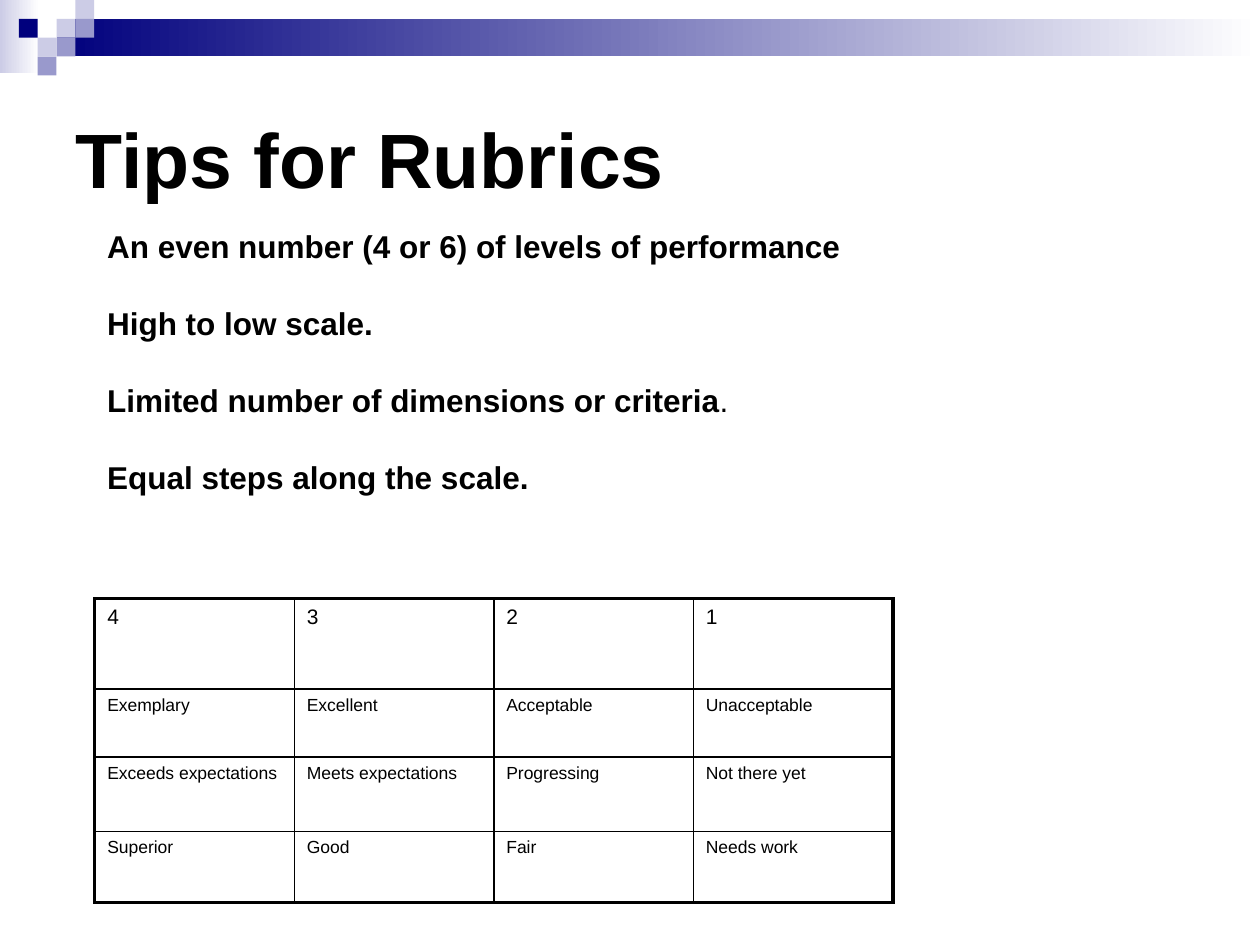
from lxml.etree import SubElement
from pptx import Presentation
from pptx.dml.color import RGBColor
from pptx.enum.shapes import MSO_SHAPE
from pptx.enum.text import MSO_ANCHOR
from pptx.oxml import parse_xml
from pptx.oxml.ns import nsdecls, qn
from pptx.util import Cm, Pt

COLOURS = {
    "ink": "000000",
    "paper": "FFFFFF",
    "navy": "00007D",
    "mid": "9999CC",
    "pale": "CCCCE6",
}
FONT = "Arial"
SQUARE = 0.38
SQUARES = [  # column, row, colour
    (3, 1, "pale"), (4, 0, "pale"), (4, 1, "mid"), (2, 2, "pale"),
    (1, 1, "navy"), (3, 2, "mid"), (2, 3, "mid"),
]
TIPS = [
    [("An even number (4 or 6) of levels of performance", True)],
    [("High to low scale.", True)],
    [("Limited number of dimensions or criteria", True), (".", False)],
    [("Equal steps along the scale.", True)],
]
RUBRIC = [
    ["4", "3", "2", "1"],
    ["Exemplary", "Excellent", "Acceptable", "Unacceptable"],
    ["Exceeds expectations", "Meets expectations", "Progressing", "Not there yet"],
    ["Superior", "Good", "Fair", "Needs work"],
]
ROW_HEIGHTS = [1.82, 1.37, 1.5, 1.43]


def colour(name):
    return RGBColor.from_string(COLOURS[name])


def add_span(para, text, size, bold=False):
    span = para.add_run()
    span.text = text
    span.font.name = FONT
    span.font.size = Pt(size)
    span.font.bold = bold
    span.font.color.rgb = colour("ink")


def add_block(page, left, top, width, height, name, fade=False):
    """Add a borderless rectangle, plain or fading to paper from left to right."""
    block = page.shapes.add_shape(
        MSO_SHAPE.RECTANGLE, Cm(left), Cm(top), Cm(width), Cm(height))
    block.shadow.inherit = False
    block.line.fill.background()
    if fade:
        block.fill.gradient()
        block.fill.gradient_angle = 0
        for stop, stop_name, position in zip(
                block.fill.gradient_stops, (name, "paper"), (0, 1)):
            stop.color.rgb = colour(stop_name)
            stop.position = position
    else:
        block.fill.solid()
        block.fill.fore_color.rgb = colour(name)


def add_banner(page, left, top, width):
    add_block(page, left, top, 0.79, 1.47, "pale", fade=True)
    bar = 3 * SQUARE
    add_block(page, left + bar, top + SQUARE, width - bar, 2 * SQUARE, "navy", fade=True)
    for column, row, name in SQUARES:
        add_block(page, left + column * SQUARE, top + row * SQUARE,
                  SQUARE, SQUARE, name)


def add_title(page, left, top, width, height):
    box = page.shapes.add_textbox(Cm(left), Cm(top), Cm(width), Cm(height))
    frame = box.text_frame
    frame.word_wrap = True
    frame.vertical_anchor = MSO_ANCHOR.MIDDLE
    add_span(frame.paragraphs[0], "Tips for Rubrics", 44, bold=True)


def add_tips(page, left, top, width, height):
    box = page.shapes.add_textbox(Cm(left), Cm(top), Cm(width), Cm(height))
    frame = box.text_frame
    frame.word_wrap = True
    for index, tip in enumerate(TIPS):
        para = frame.add_paragraph() if index else frame.paragraphs[0]
        if index:
            para.space_before = Pt(22.5)
        for text, bold in tip:
            add_span(para, text, 18, bold)


def set_borders(cell, widths):
    """Draw the borders of a cell; widths are points for left, right, top, bottom."""
    properties = cell._tc.get_or_add_tcPr()
    for index, (side, width) in enumerate(zip("LRTB", widths)):
        line = parse_xml(f'<a:ln{side} {nsdecls("a")} w="{Pt(width)}"/>')
        fill = SubElement(line, qn("a:solidFill"))
        SubElement(fill, qn("a:srgbClr")).set("val", COLOURS["ink"])
        properties.insert(index, line)


def add_rubric(page, left, top, width):
    rows, columns = len(RUBRIC), len(RUBRIC[0])
    table = page.shapes.add_table(
        rows, columns, Cm(left), Cm(top), Cm(width), Cm(sum(ROW_HEIGHTS))).table
    table.first_row = table.horz_banding = False
    for column in table.columns:
        column.width = Cm(width / columns)
    for r, texts in enumerate(RUBRIC):
        table.rows[r].height = Cm(ROW_HEIGHTS[r])
        for c, text in enumerate(texts):
            cell = table.cell(r, c)
            cell.fill.background()
            outer = (c == 0, c == columns - 1, r == 0, r == rows - 1)
            set_borders(cell, [2.25 if edge else 1 for edge in outer])
            add_span(cell.text_frame.paragraphs[0], text, 10 if r else 12)


def main():
    deck = Presentation()
    deck.slide_width, deck.slide_height = Cm(25.4), Cm(19.05)
    page = deck.slides.add_slide(deck.slide_layouts[6])
    page.background.fill.solid()
    page.background.fill.fore_color.rgb = colour("paper")
    add_banner(page, 0, 0, 25.4)
    add_title(page, 1.27, 1.27, 22.86, 3.81)
    add_rubric(page, 1.91, 12.07, 16.09)
    add_tips(page, 1.91, 4.45, 16.93, 6.35)
    deck.save("out.pptx")


if __name__ == "__main__":
    main()
